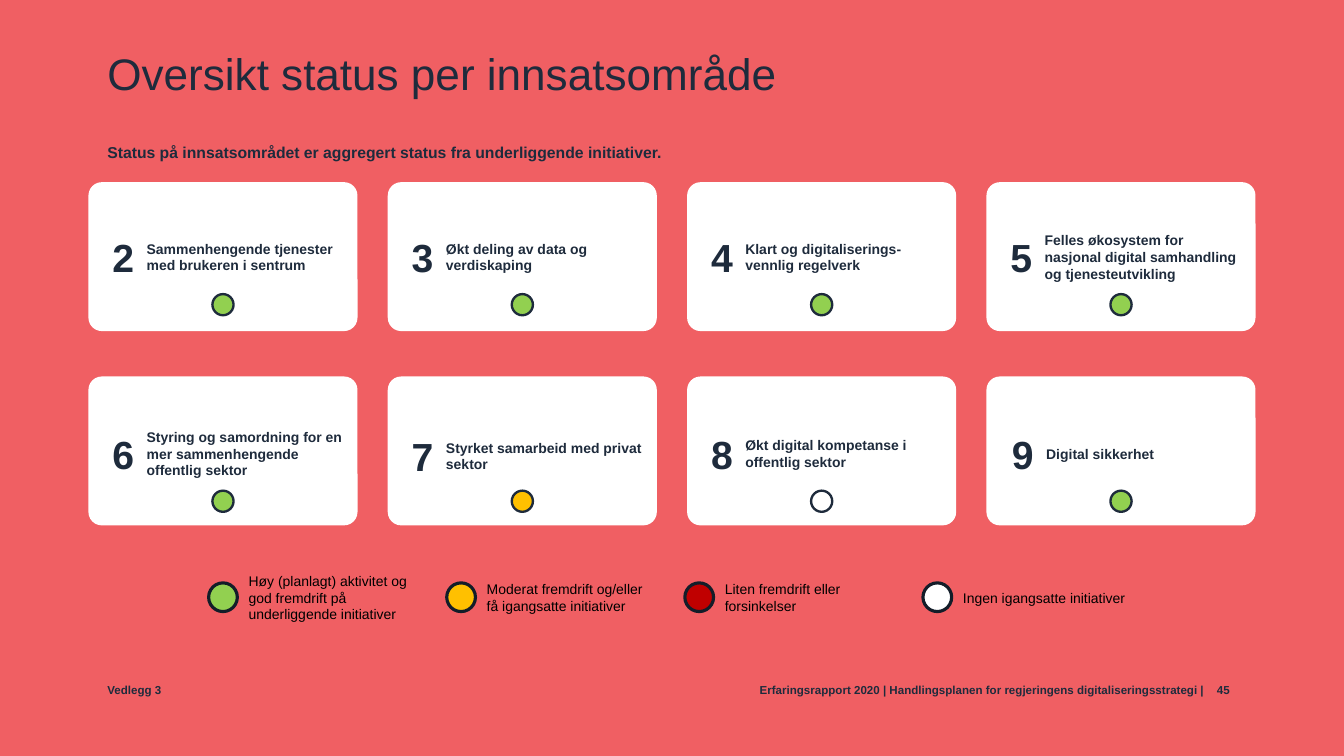
from pptx import Presentation
from pptx.dml.color import RGBColor
from pptx.enum.shapes import MSO_SHAPE
from pptx.enum.text import MSO_ANCHOR, PP_ALIGN
from pptx.util import Inches, Pt

CORAL = RGBColor(0xF0, 0x5F, 0x63)
NAVY = RGBColor(0x1E, 0x2B, 0x3C)
INK = RGBColor(0x13, 0x1D, 0x29)
BLACK = RGBColor(0, 0, 0)
WHITE = RGBColor(0xFF, 0xFF, 0xFF)
GREEN = RGBColor(0x92, 0xD0, 0x50)
AMBER = RGBColor(0xFF, 0xC0, 0x00)
RED = RGBColor(0xC0, 0x00, 0x00)

MARGIN = 1.42
FOOTER_TOP = 9.04
COLUMNS = 4
CARD_LEFT, CARD_TOP = 1.17, 2.41
CARD_WIDTH, CARD_HEIGHT = 3.56, 1.97
COLUMN_PITCH, ROW_PITCH = 3.96, 2.57
CONTENT_TOP, CONTENT_PITCH = 2.93, 2.6
CONTENT_HEIGHT = 0.94
NUMBER_WIDTH, LABEL_WIDTH = 0.62, 2.64
STATUS_SIZE, STATUS_DROP = 0.28, 0.96
LEGEND_LEFT, LEGEND_TOP, LEGEND_PITCH = 2.76, 7.71, 3.15
LEGEND_SIZE = 0.38

NO_INSET = (0, 0, 0, 0)
DEFAULT_INSET = (0.1, 0.05, 0.1, 0.05)
LABEL_INSET = (0, 0.09, 0, 0.09)

FOOTER = {"size": Pt(11), "bold": True}
TITLE = {"size": Pt(42), "bold": False}
SUBTITLE = {"size": Pt(15), "bold": True}
NUMBER = {"size": Pt(37.3), "bold": True}
LABEL = {"size": Pt(13.3), "bold": True}
LEGEND = {"size": Pt(13.3), "bold": False}

AREAS = [
    ("2", "Sammenhengende tjenester med brukeren i sentrum", GREEN),
    ("3", "Økt deling av data og verdiskaping", GREEN),
    ("4", "Klart og digitaliserings-vennlig regelverk", GREEN),
    ("5", "Felles økosystem for nasjonal digital samhandling og tjenesteutvikling", GREEN),
    ("6", "Styring og samordning for en mer sammenhengende offentlig sektor", GREEN),
    ("7", "Styrket samarbeid med privat sektor", AMBER),
    ("8", "Økt digital kompetanse i offentlig sektor", WHITE),
    ("9", "Digital sikkerhet", GREEN),
]
NUDGES = {"7": (0, 0.03), "9": (0.02, 0)}

STATUSES = [
    ("Høy (planlagt) aktivitet og god fremdrift på underliggende initiativer", GREEN),
    ("Moderat fremdrift og/eller få igangsatte initiativer", AMBER),
    ("Liten fremdrift eller forsinkelser", RED),
    ("Ingen igangsatte initiativer", WHITE),
]


def add_text(slide, box, text, style, color=NAVY, inset=NO_INSET,
             anchor=MSO_ANCHOR.TOP, align=PP_ALIGN.LEFT, spacing=None):
    frame = slide.shapes.add_textbox(*map(Inches, box)).text_frame
    left, top, right, bottom = map(Inches, inset)
    layout = {"word_wrap": True, "vertical_anchor": anchor, "margin_left": left,
              "margin_top": top, "margin_right": right, "margin_bottom": bottom}
    for key, value in layout.items():
        setattr(frame, key, value)
    paragraph = frame.paragraphs[0]
    paragraph.alignment = align
    paragraph.line_spacing = spacing
    run = paragraph.add_run()
    run.text = text
    for key, value in {"name": "Arial", **style}.items():
        setattr(run.font, key, value)
    run.font.color.rgb = color


def add_filled(slide, kind, box, fill):
    shape = slide.shapes.add_shape(kind, *map(Inches, box))
    shape.shadow.inherit = False
    shape.fill.solid()
    shape.fill.fore_color.rgb = fill
    shape.line.fill.background()
    return shape


def add_status(slide, left, top, size, fill, outline, weight):
    light = add_filled(slide, MSO_SHAPE.OVAL, (left, top, size, size), fill)
    light.line.color.rgb = outline
    light.line.width = Pt(weight)


def add_card(slide, index, number, label, status):
    row, column = divmod(index, COLUMNS)
    left = CARD_LEFT + column * COLUMN_PITCH
    card = add_filled(slide, MSO_SHAPE.ROUNDED_RECTANGLE,
                      (left, CARD_TOP + row * ROW_PITCH, CARD_WIDTH, CARD_HEIGHT), WHITE)
    card.adjustments[0] = 0.09
    nudge_x, nudge_y = NUDGES.get(number, (0, 0))
    content_top = CONTENT_TOP + row * CONTENT_PITCH
    number_left = left + 0.15 + nudge_x
    text_top = content_top + nudge_y
    add_text(slide, (number_left, text_top, NUMBER_WIDTH, CONTENT_HEIGHT), number,
             NUMBER, inset=DEFAULT_INSET, anchor=MSO_ANCHOR.MIDDLE, align=PP_ALIGN.CENTER)
    add_text(slide, (number_left + NUMBER_WIDTH, text_top, LABEL_WIDTH, CONTENT_HEIGHT),
             label, LABEL, inset=LABEL_INSET, anchor=MSO_ANCHOR.MIDDLE)
    add_status(slide, left + (CARD_WIDTH - STATUS_SIZE) / 2, content_top + STATUS_DROP,
               STATUS_SIZE, status, NAVY, 2.25)


def add_legend_entry(slide, index, meaning, status):
    left = LEGEND_LEFT + index * LEGEND_PITCH
    add_status(slide, left, LEGEND_TOP, LEGEND_SIZE, status, INK, 3)
    add_text(slide, (left + 0.43, LEGEND_TOP + 0.05, 2.38, 0.29), meaning, LEGEND,
             color=BLACK, inset=DEFAULT_INSET, anchor=MSO_ANCHOR.MIDDLE)


def add_headings(slide):
    add_text(slide, (MARGIN, 0.7, 13.08, 0.76), "Oversikt status per innsatsområde",
             TITLE, spacing=0.9)
    add_text(slide, (MARGIN, 1.89, 14.94, 0.51),
             "Status på innsatsområdet er aggregert status fra underliggende initiativer.",
             SUBTITLE, spacing=Pt(18))


def add_footer(slide):
    add_text(slide, (MARGIN, FOOTER_TOP, 7.5, 0.36), "Vedlegg 3", FOOTER)
    add_text(slide, (9.06, FOOTER_TOP, 6.92, 0.36),
             "Erfaringsrapport 2020 | Handlingsplanen for regjeringens digitaliseringsstrategi | ",
             FOOTER, align=PP_ALIGN.RIGHT)
    add_text(slide, (16, FOOTER_TOP, 0.53, 0.24), "45", FOOTER, inset=(0.1, 0, 0.1, 0.05))


def main():
    deck = Presentation()
    deck.slide_width, deck.slide_height = Inches(17.78), Inches(10)
    slide = deck.slides.add_slide(deck.slide_layouts[6])
    slide.background.fill.solid()
    slide.background.fill.fore_color.rgb = CORAL
    add_headings(slide)
    for index, area in enumerate(AREAS):
        add_card(slide, index, *area)
    for index, entry in enumerate(STATUSES):
        add_legend_entry(slide, index, *entry)
    add_footer(slide)
    deck.save("out.pptx")


if __name__ == "__main__":
    main()
